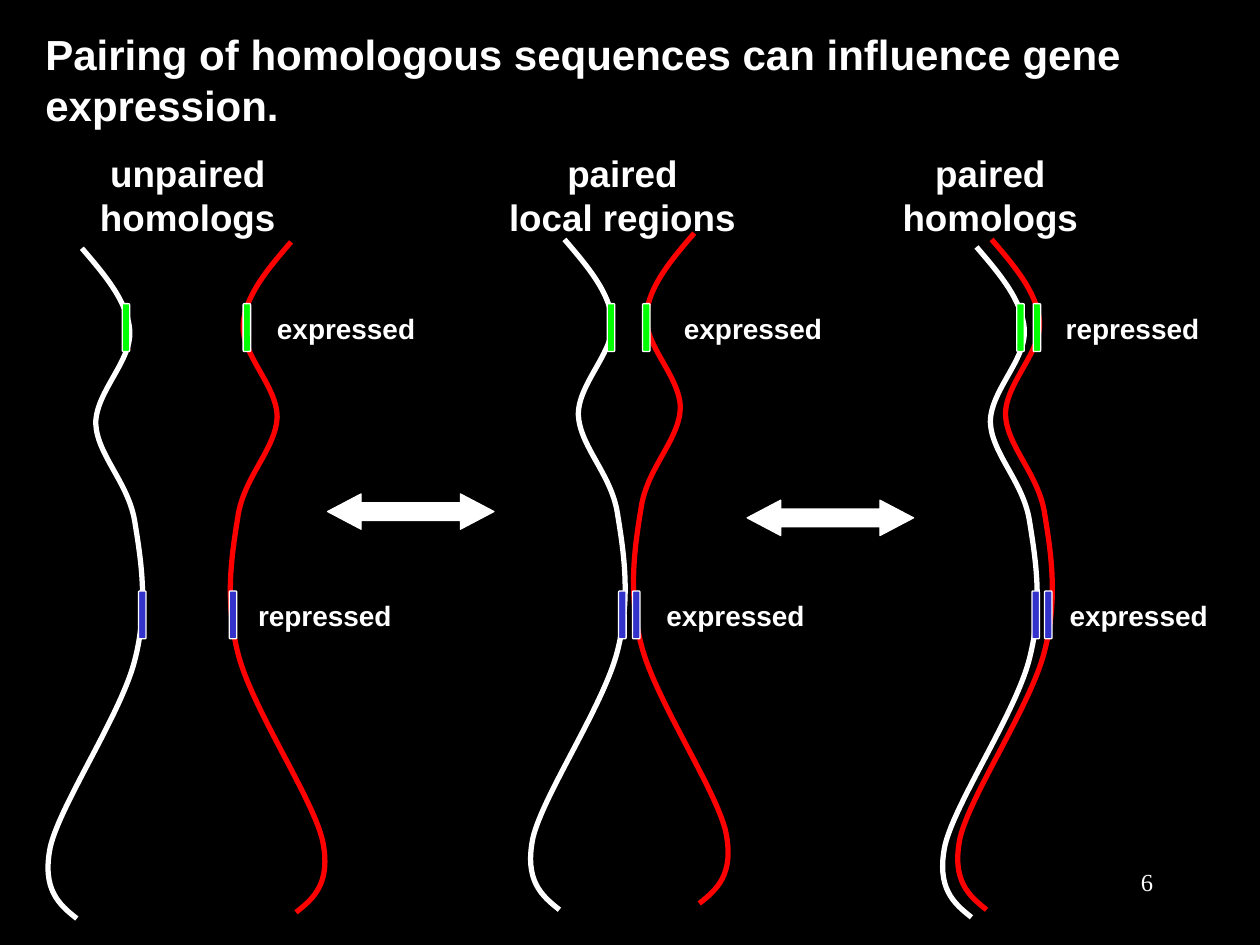
from pptx import Presentation
from pptx.dml.color import RGBColor
from pptx.enum.shapes import MSO_SHAPE
from pptx.enum.text import MSO_ANCHOR, PP_ALIGN
from pptx.oxml.ns import qn
from pptx.oxml.xmlchemy import OxmlElement
from pptx.util import Inches, Pt

WHITE, RED, GREEN, BLUE = "FFFFFF", "FF0000", "00FF00", "3333CC"

# Strand outline: a start point, then three points for each curve
WIDE, HIGH = 0.85, 5.32
STRAND = [
    (0.32, 0),
    (0.5, 0.21), (0.68, 0.42), (0.7, 0.65),
    (0.72, 0.89), (0.43, 1.14), (0.43, 1.39),
    (0.44, 1.64), (0.69, 1.86), (0.74, 2.17),
    (0.79, 2.48), (0.85, 2.84), (0.74, 3.27),
    (0.63, 3.7), (0.15, 4.41), (0.07, 4.75),
    (0, 5.09), (0.14, 5.21), (0.28, HIGH),
]

# Each state: heading and its box, strands (left, top, mirrored),
# then genes (colour, lefts, label, label left, label width)
STATES = [
    dict(head="unpaired\nhomologs", left=0.69, width=1.6,
         strands=[(0.33, 1.97, False), (1.78, 1.92, True)],
         genes=[(GREEN, (0.97, 1.93), "expressed", 2.1, 1.3),
                (BLUE, (1.1, 1.82), "repressed", 1.95, 1.26)]),
    dict(head="paired\nlocal regions", left=3.94, width=2,
         strands=[(4.16, 1.9, False), (4.98, 1.85, True)],
         genes=[(GREEN, (4.82, 5.1), "expressed", 5.33, 1.3),
                (BLUE, (4.91, 5.02), "expressed", 5.19, 1.3)]),
    dict(head="paired\nhomologs", left=7.06, width=1.6,
         strands=[(7.43, 1.96, False), (7.55, 1.9, False)],
         genes=[(GREEN, (8.07, 8.2), "repressed", 8.36, 1.26),
                (BLUE, (8.19, 8.29), "expressed", 8.39, 1.3)]),
]
ROWS = {GREEN: 2.41, BLUE: 4.69}


def color(code):
    return RGBColor.from_string(code)


def write(frame, text, size=16, font="Arial", bold=True,
          align=PP_ALIGN.LEFT, wrap=False):
    frame.word_wrap = wrap
    frame.vertical_anchor = MSO_ANCHOR.TOP
    for i, line in enumerate(text.split("\n")):
        para = frame.paragraphs[0] if i == 0 else frame.add_paragraph()
        para.alignment = align
        run = para.add_run()
        run.text = line
        run.font.size, run.font.name, run.font.bold = Pt(size), font, bold
        run.font.color.rgb = color(WHITE)


def label(slide, box, text, **style):
    shape = slide.shapes.add_textbox(*map(Inches, box))
    write(shape.text_frame, text, **style)


def block(slide, kind, box, fill, *adjust):
    shape = slide.shapes.add_shape(kind, *map(Inches, box))
    shape.shadow.inherit = False
    shape.fill.solid()
    shape.fill.fore_color.rgb = color(fill)
    shape.line.color.rgb = color(WHITE)
    shape.line.width = Pt(0.75)
    for i, value in enumerate(adjust):
        shape.adjustments[i] = value


def strand(slide, left, top, mirror, ink):
    points = [(Inches(left + (WIDE - x if mirror else x)), Inches(top + y))
              for x, y in STRAND]
    pen = slide.shapes.build_freeform(*points[0])
    pen.add_line_segments(points[1:], close=False)
    shape = pen.convert_to_shape()
    # Turn every three line segments into one Bezier curve
    track = next(shape.element.iter(qn("a:path")))
    lines = track.findall(qn("a:lnTo"))
    for i in range(0, len(lines), 3):
        curve = OxmlElement("a:cubicBezTo")
        track.append(curve)
        for line in lines[i:i + 3]:
            curve.append(line[0])
            track.remove(line)
    shape.shadow.inherit = False
    shape.fill.background()
    shape.line.color.rgb = color(ink)
    shape.line.width = Pt(3)


def state(slide, head, left, width, strands, genes):
    # Heading
    label(slide, (left, 1.15, width, 0.8), head, size=21,
          align=PP_ALIGN.CENTER)
    # Two homologs
    for place, ink in zip(strands, (WHITE, RED)):
        strand(slide, *place, ink)
    # Gene pairs with their labels
    for fill, spots, text, x, wide in genes:
        top = ROWS[fill]
        for spot in spots:
            block(slide, MSO_SHAPE.ROUNDED_RECTANGLE,
                  (spot, top, 0.06, 0.38), fill, 0.167)
        label(slide, (x, top + 0.01, wide, 0.37), text)


def title(slide, box, text):
    shape = slide.shapes.title
    shape.left, shape.top, shape.width, shape.height = map(Inches, box)
    write(shape.text_frame, text, size=24, wrap=True)


def main():
    deck = Presentation()
    deck.slide_width, deck.slide_height = Inches(10), Inches(7.5)
    slide = deck.slides.add_slide(deck.slide_layouts[5])
    slide.background.fill.solid()
    slide.background.fill.fore_color.rgb = color("000000")

    title(slide, (0.26, 0.18, 9.27, 0.91),
          "Pairing of homologous sequences can influence gene expression.")
    for item in STATES:
        state(slide, **item)
    # Arrows between the states
    for left, top in ((2.6, 3.92), (5.93, 3.97)):
        block(slide, MSO_SHAPE.LEFT_RIGHT_ARROW, (left, top, 1.32, 0.28),
              WHITE, 0.5, 0.95)
    # Page number
    label(slide, (7.17, 6.83, 2.08, 0.5), "6", size=14, bold=False,
          font="Times New Roman", align=PP_ALIGN.RIGHT, wrap=True)
    deck.save("out.pptx")


if __name__ == "__main__":
    main()
